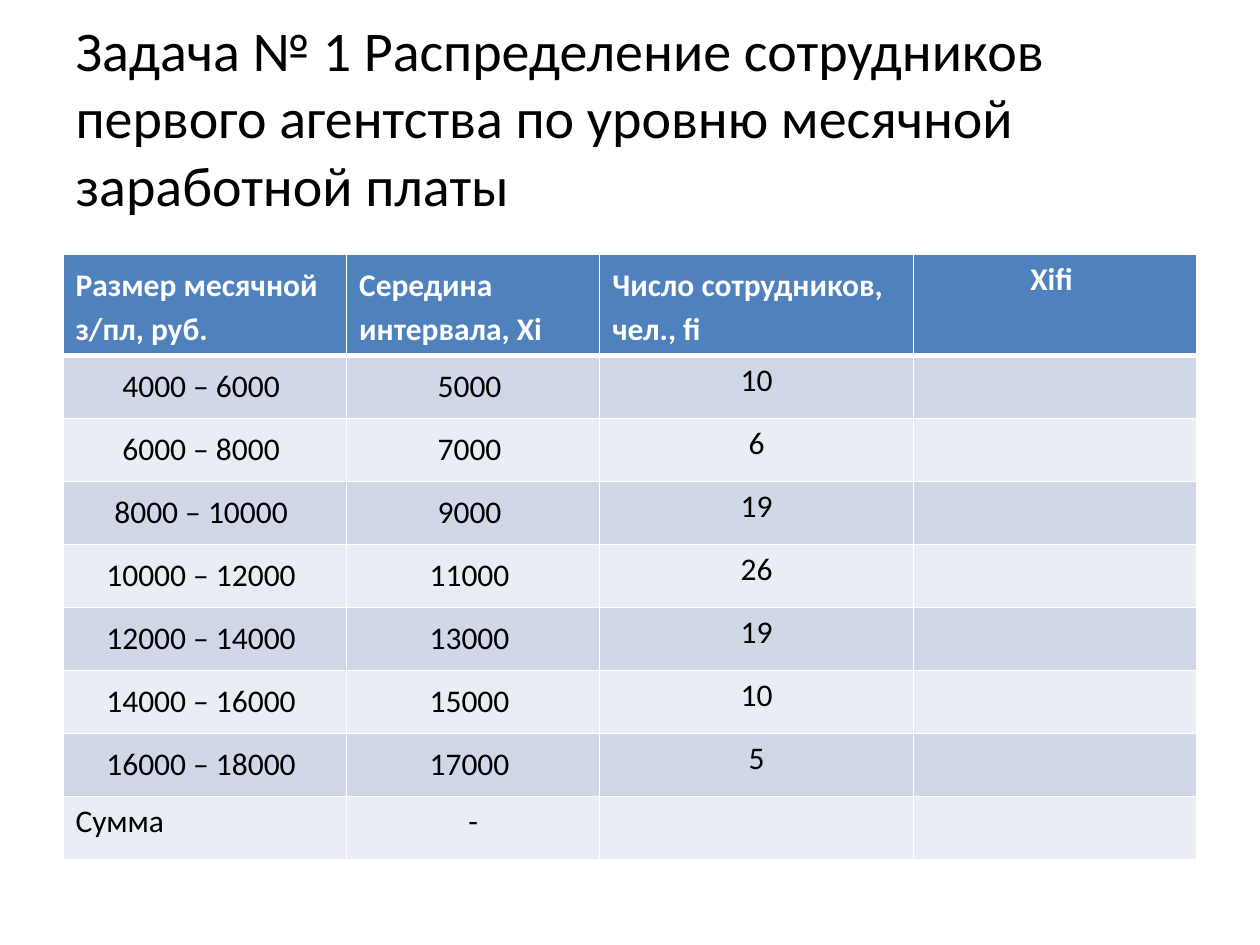
import pptx
import pptx.dml.color
import pptx.enum.text
import pptx.oxml.ns
import pptx.util
from lxml import etree

Inches = pptx.util.Inches
ALIGN = pptx.enum.text.PP_ALIGN

FONT = "Calibri"
COLORS = {
    "text": "000000",
    "header_text": "FFFFFF",
    "header": "4F81BD",
    "odd_row": "D0D8E8",
    "even_row": "E9EDF4",
    "border": "FFFFFF",
}
TITLE = ("Задача № 1 Распределение сотрудников первого агентства "
         "по уровню месячной заработной платы")
HEADERS = ["Размер месячной з/пл, руб.", "Середина интервала, Xi",
           "Число сотрудников, чел., fi", "Xifi "]
STAFF_COUNTS = [10, 6, 19, 26, 19, 10, 5]
FIRST_SALARY, SALARY_STEP = 4000, 2000
COLUMN_WIDTHS = [2.25, 2.01, 2.49, 2.25]
HEADER_HEIGHT, ROW_HEIGHT = 0.78, 0.5
LOOSE = 1.15


def rgb(name):
    return pptx.dml.color.RGBColor.from_string(COLORS[name])


def write_text(frame, text, size=18, color="text", bold=False,
               align=ALIGN.CENTER, spacing=1.0):
    paragraph = frame.paragraphs[0]
    paragraph.alignment = align
    paragraph.line_spacing = spacing
    run = paragraph.add_run()
    run.text = text
    run.font.name = FONT
    run.font.size = pptx.util.Pt(size)
    run.font.bold = bold
    run.font.color.rgb = rgb(color)


def set_borders(cell, bottom=1, top=1):
    """Draw the four cell borders; widths are in points."""
    qn = pptx.oxml.ns.qn
    properties = cell._tc.get_or_add_tcPr()
    for side, width in (("L", 1), ("R", 1), ("T", top), ("B", bottom)):
        line = etree.SubElement(properties, qn(f"a:ln{side}"),
                                w=str(pptx.util.Pt(width)))
        fill = etree.SubElement(line, qn("a:solidFill"))
        etree.SubElement(fill, qn("a:srgbClr"), val=COLORS["border"])


def add_title(slide):
    title = slide.shapes.title
    title.left, title.top = Inches(0.5), Inches(0.3)
    title.width, title.height = Inches(9), Inches(1.25)
    frame = title.text_frame
    frame.word_wrap = True
    frame.auto_size = pptx.enum.text.MSO_AUTO_SIZE.NONE
    frame.vertical_anchor = pptx.enum.text.MSO_ANCHOR.MIDDLE
    write_text(frame, TITLE, size=32, align=ALIGN.LEFT)


def salary_rows():
    """Return the salary intervals, their midpoints and staff counts."""
    rows = []
    for index, count in enumerate(STAFF_COUNTS):
        low = FIRST_SALARY + index * SALARY_STEP
        high = low + SALARY_STEP
        rows.append([f"{low} – {high} ", f"{(low + high) // 2} ", str(count), ""])
    return rows


def fill_row(table, row, texts, fill, formats, **borders):
    for column, text in enumerate(texts):
        cell = table.cell(row, column)
        set_borders(cell, **borders)
        cell.fill.solid()
        cell.fill.fore_color.rgb = rgb(fill)
        if text:
            write_text(cell.text_frame, text, **formats[column])


def add_salary_table(slide):
    rows = salary_rows() + [["Сумма", "-", "", ""]]
    height = HEADER_HEIGHT + ROW_HEIGHT * len(rows)
    table = slide.shapes.add_table(
        len(rows) + 1, len(HEADERS), Inches(0.5), Inches(2.02),
        Inches(sum(COLUMN_WIDTHS)), Inches(height)).table
    for column, width in zip(table.columns, COLUMN_WIDTHS):
        column.width = Inches(width)
    for index, row in enumerate(table.rows):
        row.height = Inches(ROW_HEIGHT if index else HEADER_HEIGHT)

    header_font = {"color": "header_text", "bold": True}
    label = {**header_font, "align": ALIGN.LEFT, "spacing": LOOSE}
    fill_row(table, 0, HEADERS, "header", [label] * 3 + [header_font], bottom=3)

    interval_formats = [{"spacing": LOOSE}] * 2 + [{}] * 2
    total_formats = [{"align": ALIGN.LEFT}] + [{}] * 3
    for number, texts in enumerate(rows, start=1):
        fill_row(table, number, texts, "odd_row" if number % 2 else "even_row",
                 total_formats if number == len(rows) else interval_formats,
                 top=3 if number == 1 else 1)


def main():
    presentation = pptx.Presentation()
    presentation.slide_width = Inches(10)
    presentation.slide_height = Inches(7.5)
    slide = presentation.slides.add_slide(presentation.slide_layouts[5])
    add_title(slide)
    add_salary_table(slide)
    presentation.save("out.pptx")


if __name__ == "__main__":
    main()
